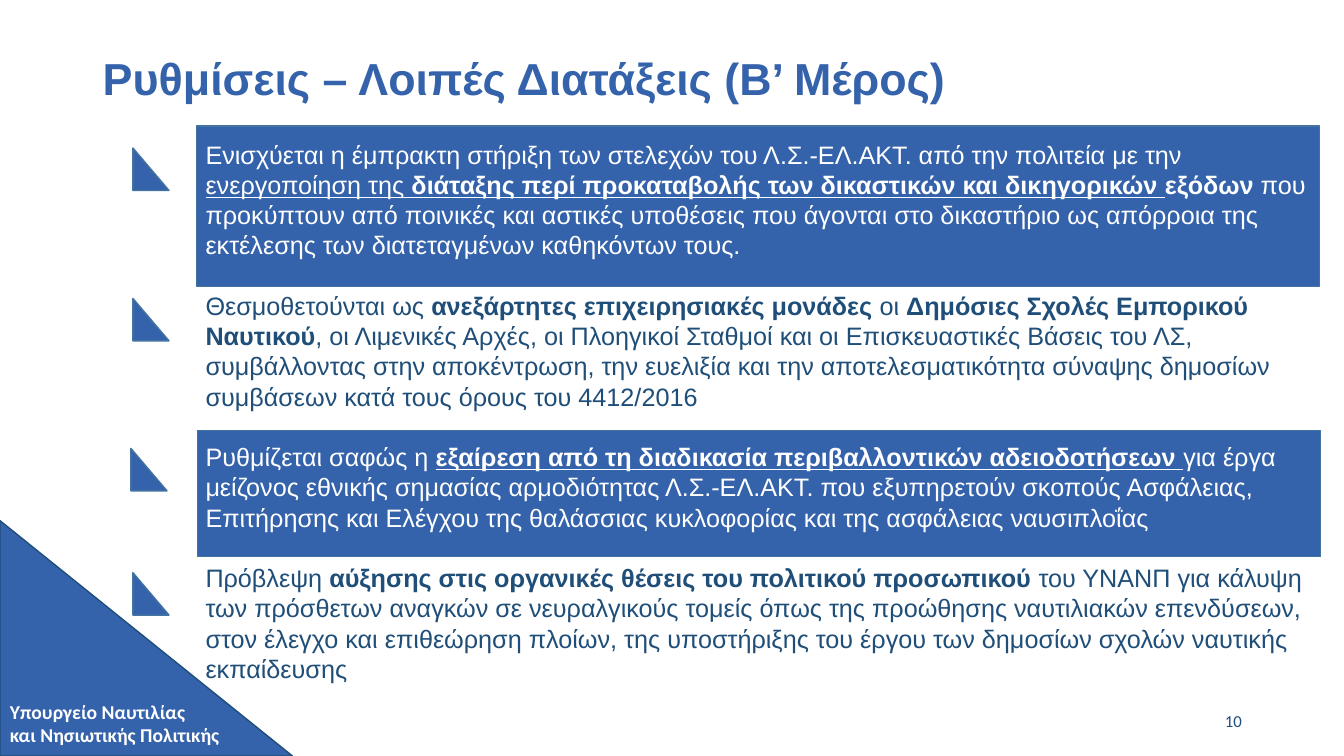
from dataclasses import dataclass

from pptx import Presentation
from pptx.dml.color import RGBColor
from pptx.enum.shapes import MSO_SHAPE
from pptx.enum.text import MSO_ANCHOR, PP_ALIGN
from pptx.util import Cm, Pt

RECTANGLE = MSO_SHAPE.RECTANGLE
TRIANGLE = MSO_SHAPE.RIGHT_TRIANGLE
TOP, MIDDLE = MSO_ANCHOR.TOP, MSO_ANCHOR.MIDDLE
LEFT, RIGHT = PP_ALIGN.LEFT, PP_ALIGN.RIGHT


@dataclass(frozen=True)
class Theme:
    """Colours, fonts and type sizes of the slide."""

    blue: str = "3462AB"
    navy: str = "1F4E79"
    outline: str = "43739E"
    white: str = "FFFFFF"
    heading_font: str = "Arial"
    footer_font: str = "Calibri"
    title_size: float = 32
    body_size: float = 18
    ministry_size: float = 14
    number_size: float = 12
    body_leading: float = 21.6


THEME = Theme()

BANDS = [(4.95, 3.18, 28.3, 4.04), (4.98, 10.85, 28.3, 3.18)]
MARKERS = [(3.35, 3.73), (3.35, 7.52), (3.3, 11.3), (3.35, 14.43)]

PROVISIONS = [
    (THEME.white, [
        ("Ενισχύεται η έμπρακτη στήριξη των στελεχών του Λ.Σ.-ΕΛ.ΑΚΤ. "
         "από την πολιτεία με την ", ""),
        ("ενεργοποίηση της ", "u"),
        ("διάταξης περί προκαταβολής των δικαστικών και δικηγορικών ", "bu"),
        ("εξόδων ", "b"),
        ("που προκύπτουν από ποινικές και αστικές υποθέσεις που άγονται στο "
         "δικαστήριο ως απόρροια της εκτέλεσης των διατεταγμένων καθηκόντων "
         "τους.", ""),
    ]),
    (THEME.navy, [
        ("Θεσμοθετούνται ως ", ""),
        ("ανεξάρτητες επιχειρησιακές μονάδες ", "b"),
        ("οι ", ""),
        ("Δημόσιες Σχολές Εμπορικού Ναυτικού", "b"),
        (", οι Λιμενικές Αρχές, οι Πλοηγικοί Σταθμοί και οι Επισκευαστικές "
         "Βάσεις του ΛΣ, συμβάλλοντας στην αποκέντρωση, την ευελιξία και την "
         "αποτελεσματικότητα σύναψης δημοσίων συμβάσεων κατά τους όρους του "
         "4412/2016", ""),
    ]),
    (THEME.white, [
        ("Ρυθμίζεται σαφώς η ", ""),
        ("εξαίρεση από τη διαδικασία περιβαλλοντικών αδειοδοτήσεων ", "bu"),
        ("για έργα μείζονος εθνικής σημασίας αρμοδιότητας Λ.Σ.-ΕΛ.ΑΚΤ. που "
         "εξυπηρετούν σκοπούς Ασφάλειας, Επιτήρησης και Ελέγχου της "
         "θαλάσσιας κυκλοφορίας και της ασφάλειας ναυσιπλοΐας", ""),
    ]),
    (THEME.navy, [
        ("Πρόβλεψη ", ""),
        ("αύξησης στις οργανικές θέσεις του πολιτικού προσωπικού ", "b"),
        ("του ΥΝΑΝΠ για κάλυψη των πρόσθετων αναγκών σε νευραλγικούς τομείς "
         "όπως της προώθησης ναυτιλιακών επενδύσεων, στον έλεγχο και "
         "επιθεώρηση πλοίων, της υποστήριξης του έργου των δημοσίων σχολών "
         "ναυτικής εκπαίδευσης", ""),
    ]),
]


def add_figure(page, kind, left, top, width, height, outline=THEME.outline):
    """Draw a blue preset shape with a thin outline."""
    figure = page.shapes.add_shape(kind, Cm(left), Cm(top), Cm(width), Cm(height))
    figure.shadow.inherit = False
    figure.fill.solid()
    figure.fill.fore_color.rgb = RGBColor.from_string(THEME.blue)
    figure.line.color.rgb = RGBColor.from_string(outline)
    figure.line.width = Pt(1)


def add_text(page, place, paragraphs, font, size, anchor=TOP, align=LEFT,
             leading=None, gap=0):
    """Add a wrapping text box from (colour, runs) paragraphs."""
    box = page.shapes.add_textbox(*(Cm(length) for length in place))
    frame = box.text_frame
    frame.word_wrap = True
    frame.vertical_anchor = anchor
    for index, (colour, runs) in enumerate(paragraphs):
        para = frame.add_paragraph() if index else frame.paragraphs[0]
        para.alignment = align
        para.line_spacing = leading
        para.space_before = Pt(gap if index else 0)
        for text, style in runs:
            span = para.add_run()
            span.text = text
            span.font.name = font
            span.font.size = Pt(size)
            span.font.color.rgb = RGBColor.from_string(colour)
            span.font.bold = "b" in style
            span.font.underline = "u" in style


def main():
    """Build the slide and save the deck."""
    deck = Presentation()
    deck.slide_width, deck.slide_height = Cm(33.87), Cm(19.05)
    page = deck.slides.add_slide(deck.slide_layouts[6])

    add_figure(page, TRIANGLE, 0, 13.12, 7.37, 5.93, THEME.navy)
    ministry = ["Υπουργείο Ναυτιλίας", "και Νησιωτικής Πολιτικής"]
    add_text(page, (0, 17.5, 6.58, 1.45),
             [(THEME.white, [(line, "b")]) for line in ministry],
             THEME.footer_font, THEME.ministry_size)

    for band in BANDS:
        add_figure(page, RECTANGLE, *band)
    for left, top in MARKERS:
        add_figure(page, TRIANGLE, left, top, 0.91, 1.07)

    add_text(page, (4.93, 3.38, 28.78, 14.88), PROVISIONS,
             THEME.heading_font, THEME.body_size,
             leading=Pt(THEME.body_leading), gap=THEME.body_leading)
    add_text(page, (2.34, 1.02, 29.21, 2.06),
             [(THEME.blue, [("Ρυθμίσεις – Λοιπές Διατάξεις (Β’ Μέρος)", "b")])],
             THEME.heading_font, THEME.title_size, anchor=MIDDLE, leading=0.9)
    add_text(page, (23.93, 17.65, 7.62, 1.02), [(THEME.navy, [("10", "")])],
             THEME.footer_font, THEME.number_size, anchor=MIDDLE, align=RIGHT)

    deck.save("out.pptx")


if __name__ == "__main__":
    main()
